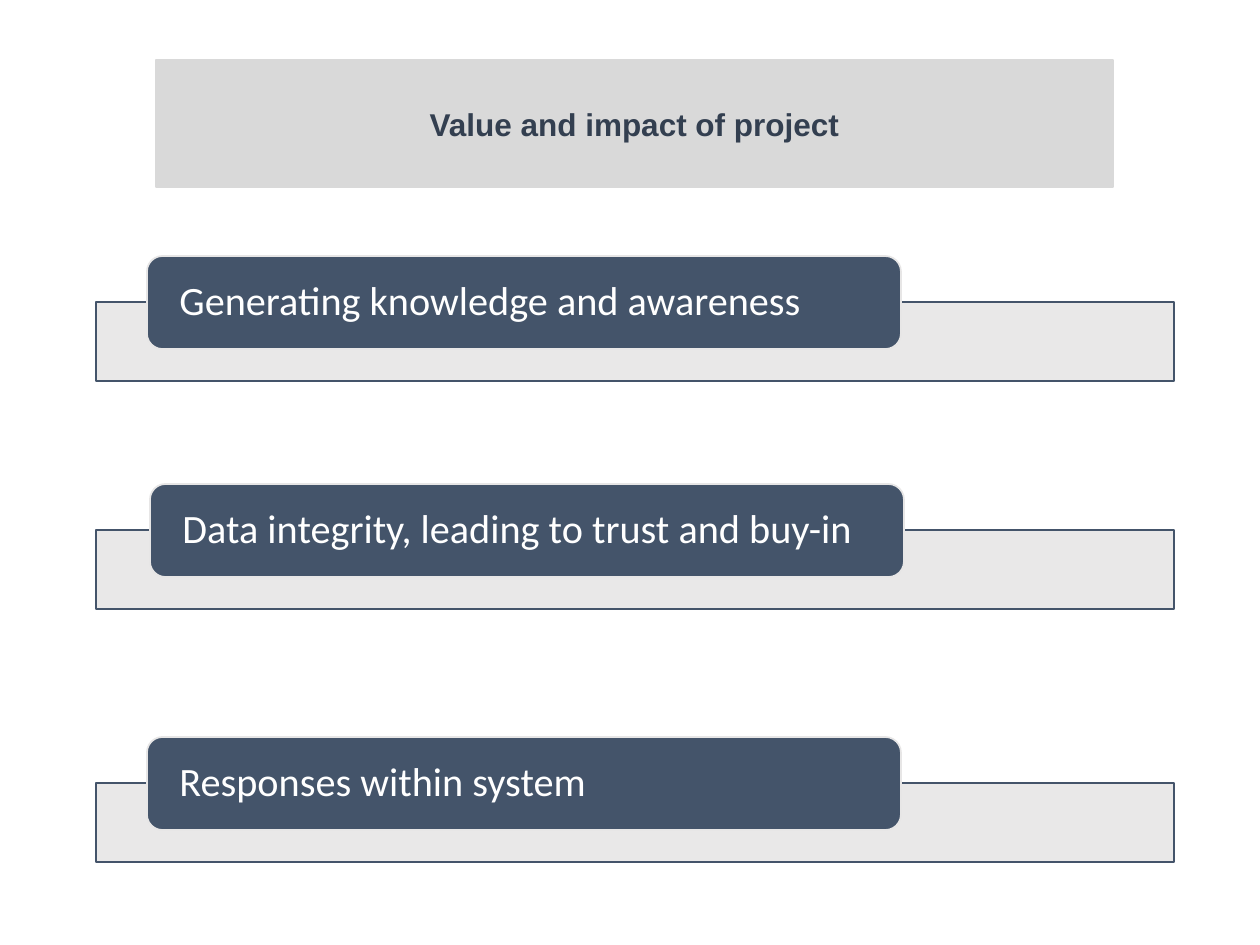
from dataclasses import dataclass

import pptx
import pptx.dml.color
import pptx.enum.shapes
import pptx.enum.text
import pptx.oxml.ns
import pptx.util
from lxml import etree

EMU_PER_PX = 914400 / 126


@dataclass(frozen=True)
class Theme:
    heading_fill: str = "D9D9D9"
    heading_text: str = "333F50"
    navy: str = "44546A"
    pale: str = "E7E6E6"
    white: str = "FFFFFF"
    heading_font: str = "Arial"
    label_font: str = "Calibri"
    heading_size: int = 18
    label_size: int = 23


@dataclass(frozen=True)
class Box:
    left: int
    top: int
    width: int
    height: int


@dataclass(frozen=True)
class Impact:
    label: str
    bar_top: int
    tab_left: int


THEME = Theme()
HEADING = Box(156, 60, 957, 127)
IMPACTS = (
    Impact("Generating knowledge and awareness", 302, 147),
    Impact("Data integrity, leading to trust and buy-in", 530, 150),
    Impact("Responses within system", 783, 147),
)


def px(length: int) -> pptx.util.Emu:
    return pptx.util.Emu(round(length * EMU_PER_PX))


def rgb(value: str) -> pptx.dml.color.RGBColor:
    return pptx.dml.color.RGBColor.from_string(value)


def paint(shape, fill: str, line: str, line_width: float) -> None:
    shape.fill.solid()
    shape.fill.fore_color.rgb = rgb(fill)
    shape.line.color.rgb = rgb(line)
    shape.line.width = pptx.util.Pt(line_width)


def write(shape, text: str, font: str, size: int, color: str, bold: bool,
          align: pptx.enum.text.PP_ALIGN, inset: int, spacing: float) -> None:
    frame = shape.text_frame
    frame.word_wrap = True
    frame.auto_size = pptx.enum.text.MSO_AUTO_SIZE.NONE
    frame.vertical_anchor = pptx.enum.text.MSO_ANCHOR.MIDDLE
    frame.margin_left = frame.margin_right = px(inset)
    frame.margin_top = frame.margin_bottom = 0
    paragraph = frame.paragraphs[0]
    paragraph.alignment = align
    paragraph.line_spacing = spacing
    run = paragraph.add_run()
    run.text = text
    run.font.name = font
    run.font.size = pptx.util.Pt(size)
    run.font.bold = bold
    run.font.color.rgb = rgb(color)


def add_box(slide, kind: pptx.enum.shapes.MSO_SHAPE, box: Box, fill: str, line: str):
    shape = slide.shapes.add_shape(
        kind, px(box.left), px(box.top), px(box.width), px(box.height))
    shape.shadow.inherit = False
    paint(shape, fill, line, 1)
    return shape


def set_opacity(shape, percent: int) -> None:
    qn = pptx.oxml.ns.qn
    color = shape.fill._xPr.find(qn("a:solidFill")).find(qn("a:srgbClr"))
    etree.SubElement(color, qn("a:alpha")).set("val", str(percent * 1000))


def add_heading(slide, text: str) -> None:
    heading = slide.shapes.title
    heading.left, heading.top = px(HEADING.left), px(HEADING.top)
    heading.width, heading.height = px(HEADING.width), px(HEADING.height)
    paint(heading, THEME.heading_fill, THEME.heading_fill, 0.75)
    write(heading, text, THEME.heading_font, THEME.heading_size, THEME.heading_text,
          True, pptx.enum.text.PP_ALIGN.CENTER, 13, 1.0)


def add_impact(slide, impact: Impact) -> None:
    kinds = pptx.enum.shapes.MSO_SHAPE
    bar = add_box(slide, kinds.RECTANGLE, Box(96, impact.bar_top, 1078, 79),
                  THEME.pale, THEME.navy)
    set_opacity(bar, 90)
    tab = add_box(slide, kinds.ROUNDED_RECTANGLE,
                  Box(impact.tab_left, impact.bar_top - 46, 754, 93),
                  THEME.navy, THEME.pale)
    write(tab, impact.label, THEME.label_font, THEME.label_size, THEME.white,
          False, pptx.enum.text.PP_ALIGN.LEFT, 28, 0.9)


def main() -> None:
    deck = pptx.Presentation()
    deck.slide_width, deck.slide_height = px(1260), px(945)
    slide = deck.slides.add_slide(deck.slide_layouts.get_by_name("Title Only"))
    add_heading(slide, "Value and impact of project")
    for impact in IMPACTS:
        add_impact(slide, impact)
    deck.save("out.pptx")


if __name__ == "__main__":
    main()
